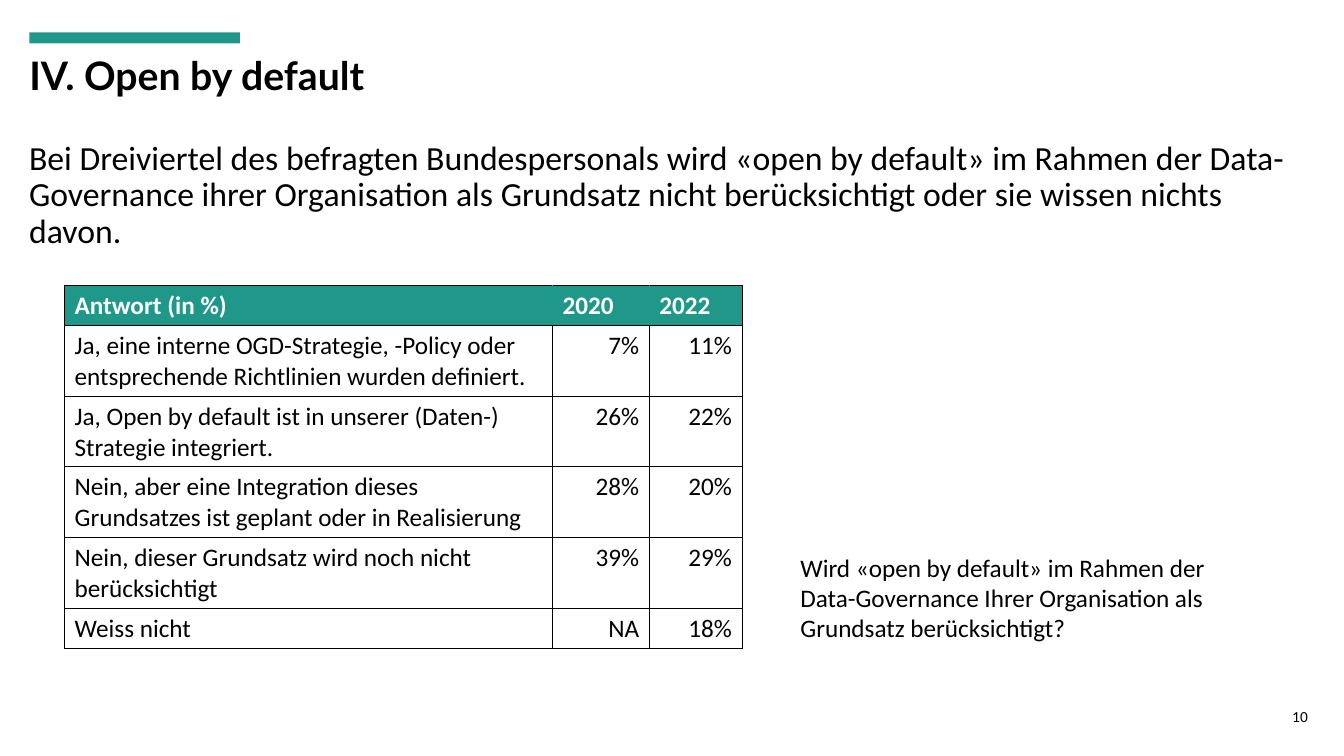
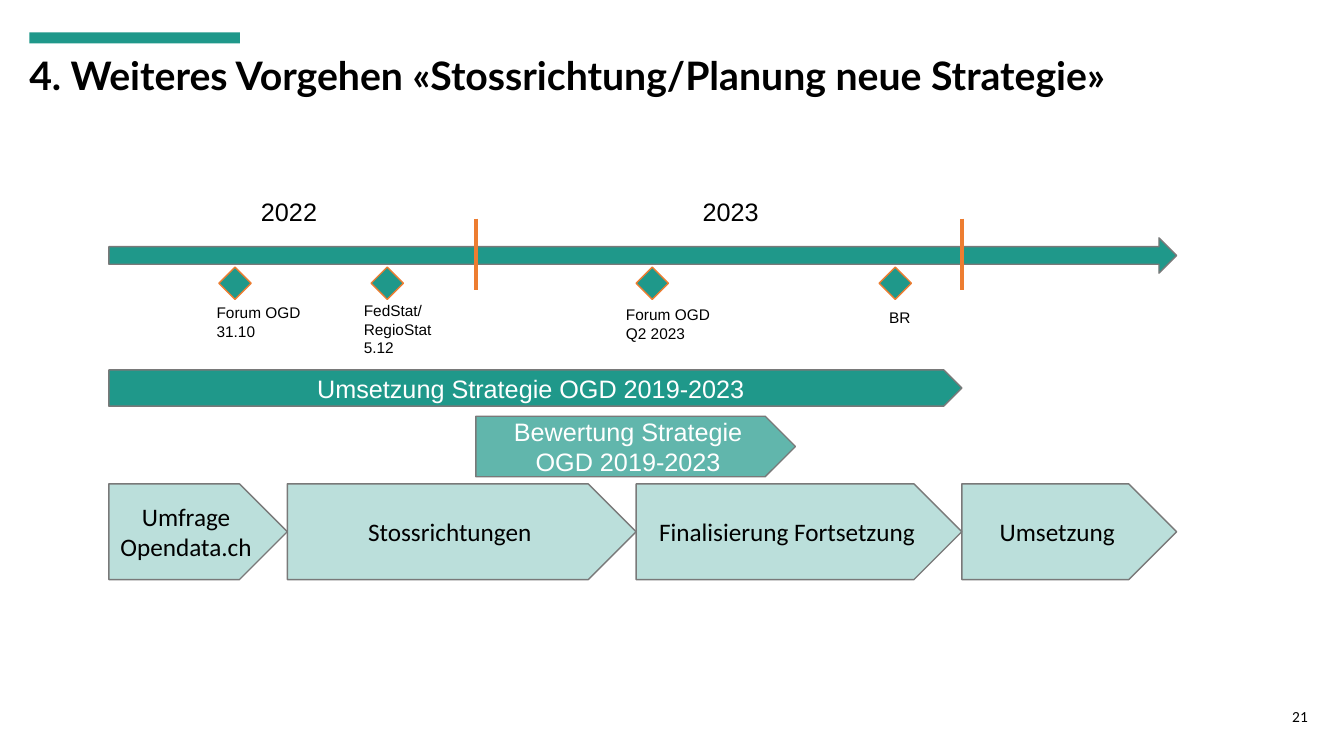
"""Build two slides on the open data strategy: a survey table and a timeline."""
from lxml.etree import SubElement
from pptx import Presentation
from pptx.dml.color import RGBColor
from pptx.enum.shapes import MSO_CONNECTOR as Connector, MSO_SHAPE as Preset
from pptx.enum.text import MSO_ANCHOR as Anchor, MSO_AUTO_SIZE as AutoSize, PP_ALIGN as Align
from pptx.oxml.ns import qn
from pptx.util import Inches, Pt

TEAL, ORANGE, GREY, BLACK, WHITE = "1F988A", "ED7D31", "797979", "000000", "FFFFFF"


def rgb(value):
    """Return the colour for a hex string."""
    return RGBColor.from_string(value)


def inches(*values):
    """Return the values as lengths."""
    return [Inches(value) for value in values]


class Deck:
    """Hold the style and the current slide."""

    text_styles = {
        "title": {"name": "Lato", "size": Pt(28), "bold": True},
        "lead": {"name": "Calibri", "size": Pt(24.1), "bold": False},
        "body": {"name": "Calibri", "size": Pt(18), "bold": False},
        "header": {"name": "Calibri", "size": Pt(18), "bold": True},
        "bar": {"name": "Arial", "size": Pt(18), "bold": False},
        "label": {"name": "Arial", "size": Pt(11), "bold": False},
        "number": {"name": "Calibri", "size": Pt(11), "bold": False},
    }

    def __init__(self):
        """Start an empty widescreen presentation."""
        self.presentation = Presentation()
        self.presentation.slide_width, self.presentation.slide_height = inches(13.33, 7.5)
        self.slide = None

    def fill_text(self, frame, text, style, color=BLACK, **paragraph_format):
        """Fill a text frame, one paragraph a line."""
        frame.text = text
        for paragraph in frame.paragraphs:
            for name, value in paragraph_format.items():
                setattr(paragraph, name, value)
            for name, value in self.text_styles[style].items():
                setattr(paragraph.font, name, value)
            paragraph.font.color.rgb = rgb(color)

    def add_slide(self, title, number):
        """Add a slide with accent bar, title and page number."""
        self.slide = self.presentation.slides.add_slide(self.presentation.slide_layouts[5])
        self.shape(Preset.RECTANGLE, (0.29, 0.32, 2.09, 0.11))
        heading = self.slide.shapes.title
        heading.left, heading.top, heading.width, heading.height = inches(0.19, 0.5, 12.88, 0.53)
        frame = heading.text_frame
        self.fill_text(frame, title, "title", alignment=Align.LEFT, line_spacing=0.9)
        for name, value in {"vertical_anchor": Anchor.BOTTOM, "word_wrap": True,
                            "auto_size": AutoSize.SHAPE_TO_FIT_TEXT}.items():
            setattr(frame, name, value)
        self.text(number, (12.58, 6.97, 0.49, 0.29), "number", alignment=Align.RIGHT)

    def text(self, text, box, style, wrap=True, **paragraph_format):
        """Add a text box."""
        frame = self.slide.shapes.add_textbox(*inches(*box)).text_frame
        frame.word_wrap = wrap
        self.fill_text(frame, text, style, **paragraph_format)

    def shape(self, preset, box, line=None, opacity=100):
        """Add a teal preset shape and return it."""
        shape = self.slide.shapes.add_shape(preset, *inches(*box))
        shape.shadow.inherit = False
        shape.fill.solid()
        shape.fill.fore_color.rgb = rgb(TEAL)
        if opacity < 100:
            color = shape._element.spPr.find(qn("a:solidFill"))[0]
            SubElement(color, qn("a:alpha"), val=str(opacity * 1000))
        if line:
            shape.line.color.rgb = rgb(line)
            shape.line.width = Pt(1)
        else:
            shape.line.fill.background()
        return shape

    def phase(self, text, box, style, color, opacity=100):
        """Add a labelled pentagon arrow."""
        shape = self.shape(Preset.PENTAGON, box, GREY, opacity)
        shape.text_frame.vertical_anchor = Anchor.MIDDLE
        self.fill_text(shape.text_frame, text, style, color, alignment=Align.CENTER)

    def year_mark(self, x):
        """Add a vertical line across the time axis."""
        line = self.slide.shapes.add_connector(Connector.STRAIGHT, *inches(x, 2.17, x, 2.88))
        line.line.color.rgb = rgb(ORANGE)
        line.line.width = Pt(3)
        SubElement(line._element.spPr, qn("a:effectLst"))

    def borders(self, cell, colors):
        """Draw the cell's left, right, top and bottom borders."""
        properties = cell._tc.get_or_add_tcPr()
        for side, color in zip("LRTB", colors):
            line = SubElement(properties, qn(f"a:ln{side}"), w=str(Pt(0.5)))
            SubElement(SubElement(line, qn("a:solidFill")), qn("a:srgbClr"), val=color)

    def table(self, rows, origin, widths, heights):
        """Add a bordered table with a teal header row."""
        size = (sum(widths), sum(heights))
        table = self.slide.shapes.add_table(len(rows), len(widths), *inches(*origin, *size)).table
        table.first_row = table.horz_banding = False
        for column, width in zip(table.columns, widths):
            column.width = Inches(width)
        for row, height in zip(table.rows, heights):
            row.height = Inches(height)
        last = len(widths) - 1
        for i, values in enumerate(rows):
            for j, value in enumerate(values):
                cell = table.cell(i, j)
                if i == 0:
                    left = TEAL if j else BLACK
                    right = TEAL if j < last else BLACK
                    self.borders(cell, (left, right, BLACK, BLACK))
                    cell.fill.solid()
                    cell.fill.fore_color.rgb = rgb(TEAL)
                    self.fill_text(cell.text_frame, value, "header", WHITE)
                else:
                    self.borders(cell, [BLACK] * 4)
                    cell.fill.background()
                    self.fill_text(cell.text_frame, value, "body",
                                   alignment=Align.RIGHT if j else Align.LEFT)


def survey_slide(deck):
    """Build the slide with the survey answers."""
    deck.add_slide("IV. Open by default", "10")
    deck.text("Bei Dreiviertel des befragten Bundespersonals wird «open by default» im Rahmen der "
              "Data-Governance ihrer Organisation als Grundsatz nicht berücksichtigt oder sie "
              "wissen nichts davon.", (0.19, 1.35, 12.82, 1.11), "lead", line_spacing=0.9)
    deck.text("Wird «open by default» im Rahmen der Data-Governance Ihrer Organisation als "
              "Grundsatz berücksichtigt?", (7.84, 5.43, 4.73, 1.01), "body")
    answers = [
        ("Antwort (in %)", "2020", "2022"),
        ("Ja, eine interne OGD-Strategie, -Policy oder entsprechende Richtlinien wurden "
         "definiert.", "7%", "11%"),
        ("Ja, Open by default ist in unserer (Daten-) Strategie integriert.", "26%", "22%"),
        ("Nein, aber eine Integration dieses Grundsatzes ist geplant oder in Realisierung",
         "28%", "20%"),
        ("Nein, dieser Grundsatz wird noch nicht berücksichtigt", "39%", "29%"),
        ("Weiss nicht", "NA", "18%"),
    ]
    deck.table(answers, (0.64, 2.83), (4.84, 0.96, 0.92), [0.4] + [0.7] * 4 + [0.4])


def timeline_slide(deck):
    """Build the slide with the strategy timeline."""
    deck.add_slide("4. Weiteres Vorgehen «Stossrichtung/Planung neue Strategie»", "21")
    start, survey_end, year_end, draft_end, next_year_end, end = 1.08, 2.85, 4.72, 6.31, 9.54, 11.67
    deck.shape(Preset.RIGHT_ARROW, (start, 2.36, end - start, 0.35), GREY)
    for x in (year_end, next_year_end):
        deck.year_mark(x)
    for year, left in (("2022", 2.49), ("2023", 6.87)):
        deck.text(year, (left, 1.9, 0.76, 0.4), "bar", wrap=False)
    milestones = [
        (2.17, "Forum OGD\n31.10", (2.05, 2.96, 1.04, 0.47)),
        (3.68, "FedStat/\nRegioStat\n5.12", (3.51, 2.94, 1.07, 0.66)),
        (6.31, "Forum OGD\nQ2 2023", (6.11, 2.98, 1.04, 0.47)),
        (8.72, "BR", (8.72, 3.01, 0.42, 0.29)),
    ]
    for left, label, box in milestones:
        deck.shape(Preset.DIAMOND, (left, 2.65, 0.32, 0.32), ORANGE)
        deck.text(label, box, "label", wrap=False)
    deck.phase("Umsetzung Strategie OGD 2019-2023",
               (start, 3.67, next_year_end - start, 0.36), "bar", WHITE)
    deck.phase("Bewertung Strategie OGD 2019-2023", (year_end, 4.13, 3.17, 0.6), "bar", WHITE, 70)
    names = ("Umfrage Opendata.ch", "Stossrichtungen", "Finalisierung Fortsetzung", "Umsetzung")
    edges = (start, survey_end, draft_end, next_year_end, end)
    for name, left, right in zip(names, edges, edges[1:]):
        deck.phase(name, (left, 4.8, right - left, 0.95), "body", BLACK, 30)


def main():
    """Build and save the presentation."""
    deck = Deck()
    survey_slide(deck)
    timeline_slide(deck)
    deck.presentation.save("out.pptx")


if __name__ == "__main__":
    main()
